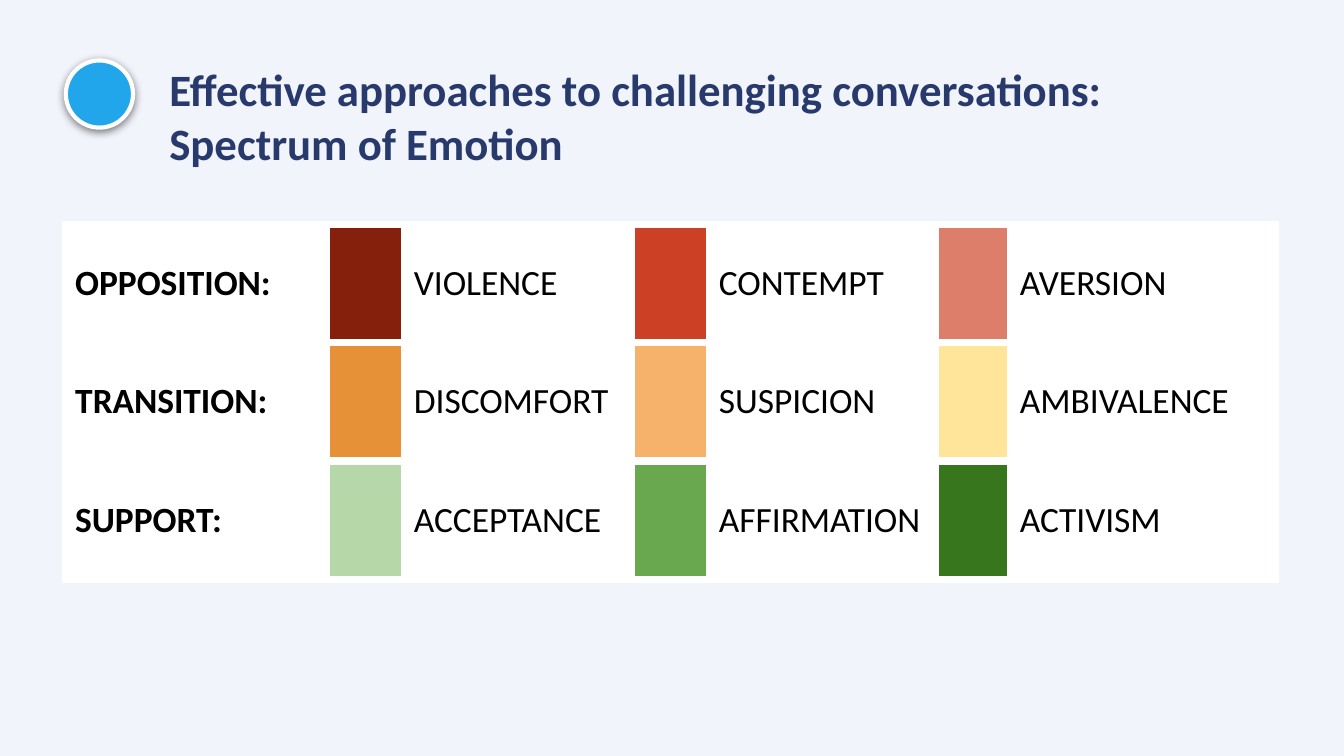
from dataclasses import dataclass

from lxml import etree
from pptx import Presentation
from pptx.dml.color import RGBColor
from pptx.enum import shapes, text
from pptx.oxml import ns
from pptx.util import Inches, Pt

FONT = "Calibri"
COLORS = {
    "background": "F2F4FB",
    "title": "273A6B",
    "text": "000000",
    "white": "FFFFFF",
    "marker": "22A6EB",
}


@dataclass
class Emotion:
    name: str
    color: str


@dataclass
class Stage:
    label: str
    emotions: list[Emotion]


STAGES = [
    Stage("OPPOSITION:", [Emotion("VIOLENCE", "85200C"),
                          Emotion("CONTEMPT", "CC4125"),
                          Emotion("AVERSION", "DD7E6B")]),
    Stage("TRANSITION:", [Emotion("DISCOMFORT", "E69138"),
                          Emotion("SUSPICION", "F6B26B"),
                          Emotion("AMBIVALENCE", "FFE599")]),
    Stage("SUPPORT:", [Emotion("ACCEPTANCE", "B6D7A8"),
                       Emotion("AFFIRMATION", "6AA84F"),
                       Emotion("ACTIVISM", "38761D")]),
]
SLIDE_WIDTH = 10
COLUMN_WIDTHS = [1.94, 0.58, 1.69, 0.58, 1.68, 0.56, 1.97]
ROW_HEIGHT = 0.88


def set_fill(target, color: str) -> None:
    target.fill.solid()
    target.fill.fore_color.rgb = RGBColor.from_string(color)


def write_text(frame, content: str, *, size: float, color: str,
               bold: bool = False, inset: float = 0.1) -> None:
    """Write one paragraph per line of content."""
    frame.margin_left = frame.margin_right = Inches(inset)
    frame.margin_top = frame.margin_bottom = Inches(inset)
    frame.word_wrap = True
    frame.text = content
    for paragraph in frame.paragraphs:
        paragraph.alignment = text.PP_ALIGN.LEFT
        font = paragraph.runs[0].font
        font.name, font.size, font.bold = FONT, Pt(size), bold
        font.color.rgb = RGBColor.from_string(color)


def add_xml_child(parent, tag: str, **attributes):
    return etree.SubElement(parent, ns.qn(tag), attributes)


def set_borders(cell, color: str, width: float) -> None:
    properties = cell._tc.get_or_add_tcPr()
    for index, side in enumerate(("L", "R", "T", "B")):
        line = etree.Element(ns.qn(f"a:ln{side}"), w=str(Pt(width)))
        fill = add_xml_child(line, "a:solidFill")
        add_xml_child(fill, "a:srgbClr", val=color)
        properties.insert(index, line)


def draw_title(slide) -> None:
    title = slide.shapes.title
    title.left, title.top = Inches(1.16), Inches(0.64)
    title.width, title.height = Inches(8.13), Inches(0.72)
    frame = title.text_frame
    write_text(frame,
               "Effective approaches to challenging conversations:\nSpectrum of Emotion",
               size=24, color=COLORS["title"], bold=True)
    frame.auto_size = text.MSO_AUTO_SIZE.NONE
    frame.vertical_anchor = text.MSO_ANCHOR.BOTTOM


def draw_cell(cell, fill: str, label: str = "", bold: bool = False) -> None:
    set_fill(cell, fill)
    set_borders(cell, COLORS["white"], 4.5)
    if label:
        write_text(cell.text_frame, label, size=19, color=COLORS["text"], bold=bold)
        cell.margin_left = cell.margin_right = Inches(0.07)
        cell.margin_top = cell.margin_bottom = Inches(0.07)
        cell.vertical_anchor = text.MSO_ANCHOR.MIDDLE


def draw_spectrum(slide, stages: list[Stage]) -> None:
    table = slide.shapes.add_table(
        len(stages), len(COLUMN_WIDTHS), Inches(0.49), Inches(1.67),
        Inches(sum(COLUMN_WIDTHS)), Inches(ROW_HEIGHT * len(stages))).table
    table.first_row = table.horz_banding = False
    for column, width in zip(table.columns, COLUMN_WIDTHS):
        column.width = Inches(width)
    for row, stage in enumerate(stages):
        table.rows[row].height = Inches(ROW_HEIGHT)
        draw_cell(table.cell(row, 0), COLORS["white"], stage.label, bold=True)
        for index, emotion in enumerate(stage.emotions):
            swatch = 2 * index + 1
            draw_cell(table.cell(row, swatch), emotion.color)
            draw_cell(table.cell(row, swatch + 1), COLORS["white"], emotion.name)


def draw_marker(slide) -> None:
    marker = slide.shapes.add_shape(shapes.MSO_SHAPE.OVAL, Inches(0.49), Inches(0.45),
                                    Inches(0.5), Inches(0.5))
    set_fill(marker, COLORS["marker"])
    marker.line.color.rgb = RGBColor.from_string(COLORS["white"])
    marker.line.width = Pt(2.25)
    # Soft shadow straight below
    marker.shadow.inherit = False
    effects = marker._element.spPr.find(ns.qn("a:effectLst"))
    shadow = add_xml_child(effects, "a:outerShdw", blurRad=str(Pt(4.5)),
                           dist=str(Pt(1.5)), dir="5400000", algn="bl", rotWithShape="0")
    color = add_xml_child(shadow, "a:srgbClr", val=COLORS["text"])
    add_xml_child(color, "a:alpha", val="50000")


def main() -> None:
    presentation = Presentation()
    # Widescreen, 16:9
    presentation.slide_width = Inches(SLIDE_WIDTH)
    presentation.slide_height = Inches(SLIDE_WIDTH * 9 / 16)
    slide = presentation.slides.add_slide(presentation.slide_layouts[5])
    set_fill(slide.background, COLORS["background"])
    draw_title(slide)
    draw_spectrum(slide, STAGES)
    draw_marker(slide)
    presentation.save("out.pptx")


if __name__ == "__main__":
    main()
